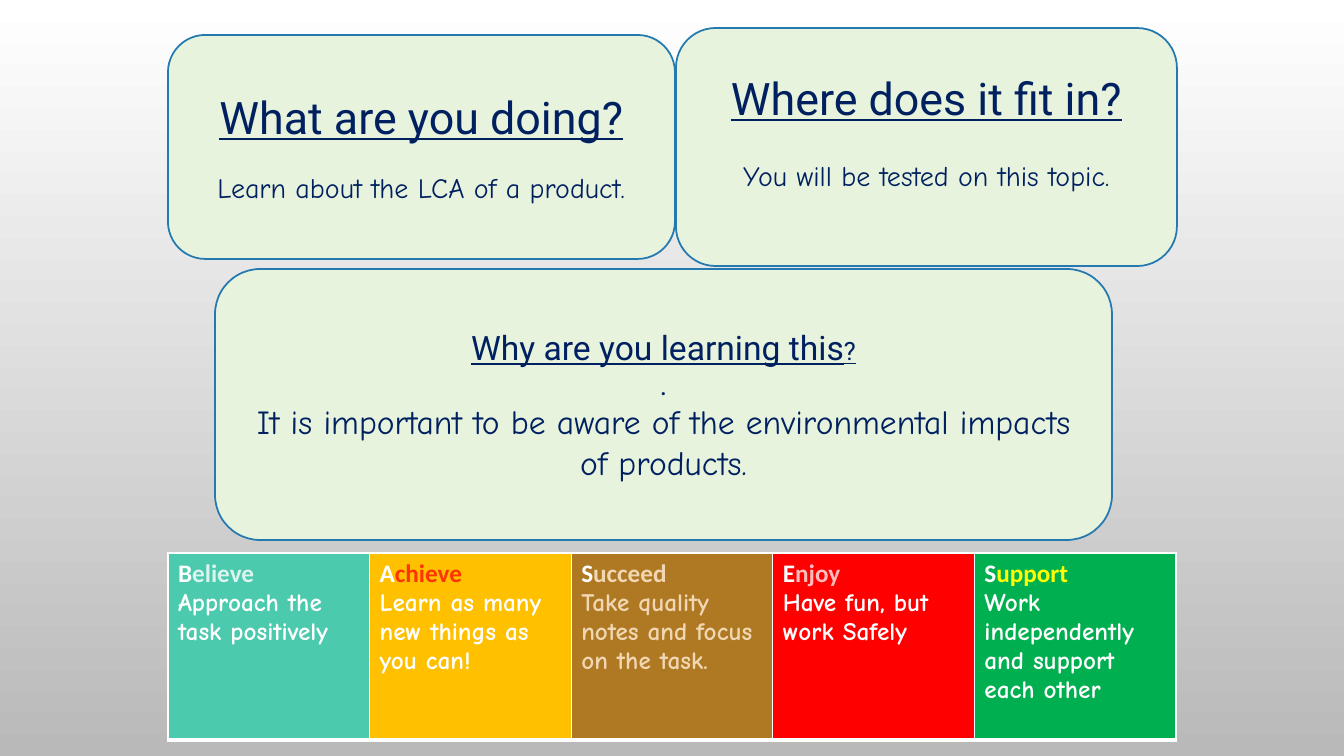
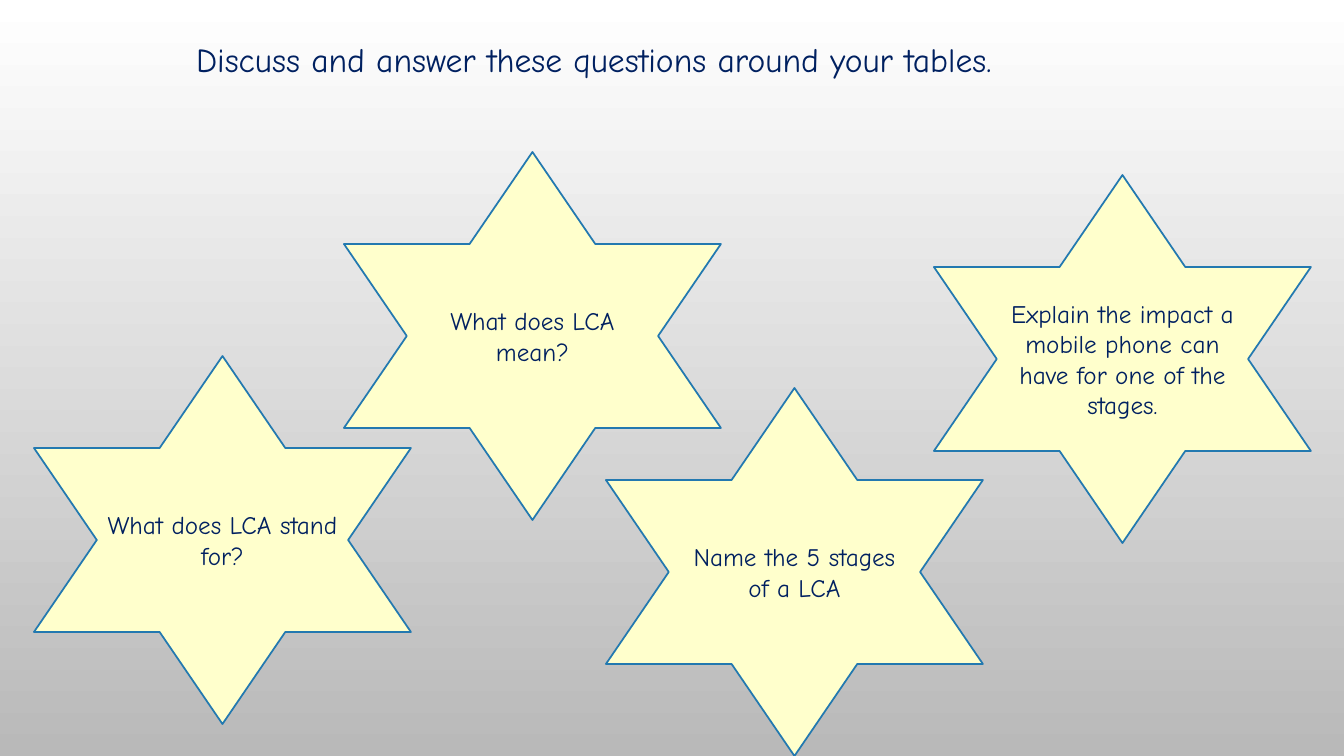
from dataclasses import dataclass

from lxml.etree import SubElement
from pptx import Presentation
from pptx.dml.color import RGBColor
from pptx.enum.shapes import MSO_SHAPE as Preset
from pptx.enum.text import MSO_ANCHOR as Anchor, MSO_AUTO_SIZE as AutoSize, PP_ALIGN as Align
from pptx.oxml.ns import qn
from pptx.util import Emu, Pt

PX = 914400 / 100.8
TITLE_ONLY, BLANK = 5, 6


@dataclass(frozen=True)
class Theme:
    ink: str = "002060"
    outline: str = "2379B0"
    card: str = "E7F3DD"
    star: str = "FFFFCC"
    white: str = "FFFFFF"
    sky: tuple = ("FFFFFF", "B9B9B9")
    heading_font: str = "Roboto"
    hand_font: str = "Comic Neue"
    value_font: str = "Calibri"
    display: int = 32
    large: int = 24
    medium: int = 20
    small: int = 18


THEME = Theme()
HEADING = {"name": THEME.heading_font, "underline": True}
HAND = {"name": THEME.hand_font}

CARDS = [
    ((168, 35, 507, 224), 5, [
        (0, [("What are you doing?", THEME.display, HEADING)]),
        (19, [("Learn about the LCA of a product.", THEME.medium, HAND)]),
    ]),
    ((676, 28, 501, 238), 36, [
        (0, [("Where does it fit in?", THEME.display, HEADING)]),
        (24, [("You will be tested on this topic.", THEME.medium, HAND)]),
    ]),
    ((215, 269, 897, 271), 5, [
        (0, [("Why are you learning this", THEME.large, HEADING),
             ("?", THEME.small, HEADING)]),
        (0, [(".", THEME.medium, {"name": THEME.heading_font})]),
        (0, [("It is important to be aware of the environmental impacts of products.",
              THEME.large, HAND)]),
    ]),
]

VALUES = [
    ("Believe", "Approach the task positively", "4BCAAD", "DBF4EF", THEME.white),
    ("Achieve", "Learn as many new things as you can!", "FFC000", "FF3300", THEME.white),
    ("Succeed", "Take quality notes and focus on the task.", "AF7823", "F0D7B2", "F0D7B2"),
    ("Enjoy", "Have fun, but work Safely", "FF0000", "FFBDBD", THEME.white),
    ("Support", "Work independently and support each other", "00B050", "FFFF00", THEME.white),
]

STAR_SIZE = (377, 368)
QUESTIONS = [
    ((34, 356), ["What does LCA stand for?"]),
    ((606, 388), ["Name the 5 stages", "of a LCA"]),
    ((344, 152), ["What does LCA mean?"]),
    ((934, 175), ["Explain the impact a mobile phone can have for one of the stages."]),
]


def px(length):
    return Emu(round(length * PX))


def emu_box(box):
    return [px(length) for length in box]


def paint(fill, colour):
    fill.solid()
    fill.fore_color.rgb = RGBColor.from_string(colour)


def add_run(paragraph, text, size, style, colour=THEME.ink):
    run = paragraph.add_run()
    run.text = text
    for attribute, value in {"size": Pt(size), **style}.items():
        setattr(run.font, attribute, value)
    run.font.color.rgb = RGBColor.from_string(colour)


def write_paragraphs(frame, paragraphs, align=Align.CENTER):
    for index, (gap, runs) in enumerate(paragraphs):
        paragraph = frame.add_paragraph() if index else frame.paragraphs[0]
        paragraph.alignment = align
        paragraph.space_before = Pt(gap)
        for run in runs:
            add_run(paragraph, *run)


def add_panel(slide, preset, box, colour, paragraphs, bottom_inset=5):
    panel = slide.shapes.add_shape(preset, *emu_box(box))
    panel.shadow.inherit = False
    paint(panel.fill, colour)
    paint(panel.line.fill, THEME.outline)
    panel.line.width = Pt(1.25)
    frame = panel.text_frame
    frame_format = {"word_wrap": True, "vertical_anchor": Anchor.MIDDLE,
                    "margin_bottom": px(bottom_inset)}
    for attribute, value in frame_format.items():
        setattr(frame, attribute, value)
    write_paragraphs(frame, paragraphs)


def add_borders(cell):
    properties = cell._tc.get_or_add_tcPr()
    for side, width in {"lnL": 1, "lnR": 1, "lnT": 1, "lnB": 3}.items():
        line = SubElement(properties, qn(f"a:{side}"), w=str(Pt(width)))
        solid = SubElement(line, qn("a:solidFill"))
        SubElement(solid, qn("a:srgbClr"), val=THEME.white)


def add_values_table(slide, box):
    table = slide.shapes.add_table(1, len(VALUES), *emu_box(box)).table
    table.first_row = table.horz_banding = False
    value_style = {"name": THEME.value_font, "bold": True}
    advice_style = {**HAND, "bold": True}
    for cell, (value, advice, fill, accent, advice_colour) in zip(table.rows[0].cells, VALUES):
        add_borders(cell)
        paint(cell.fill, fill)
        write_paragraphs(cell.text_frame, [
            (0, [(value[0], THEME.small, value_style, THEME.white),
                 (value[1:], THEME.small, value_style, accent)]),
            (0, [(advice, THEME.small, advice_style, advice_colour)]),
        ], Align.LEFT)


def add_title(slide, box, text):
    title = slide.shapes.title
    for attribute, value in zip(("left", "top", "width", "height"), emu_box(box)):
        setattr(title, attribute, value)
    frame = title.text_frame
    frame_format = {"word_wrap": True, "vertical_anchor": Anchor.TOP,
                    "auto_size": AutoSize.NONE}
    for attribute, value in frame_format.items():
        setattr(frame, attribute, value)
    write_paragraphs(frame, [(0, [(text, THEME.large, HAND)])], Align.LEFT)


def set_background(master):
    fill = master.background.fill
    fill.gradient()
    fill.gradient_angle = 270
    for stop, position, colour in zip(fill.gradient_stops, (0, 1), THEME.sky):
        stop.position = position
        stop.color.rgb = RGBColor.from_string(colour)


def build_purpose_slide(deck):
    slide = deck.slides.add_slide(deck.slide_layouts[BLANK])
    for box, bottom_inset, paragraphs in CARDS:
        add_panel(slide, Preset.ROUNDED_RECTANGLE, box, THEME.card, paragraphs, bottom_inset)
    add_values_table(slide, (168, 553, 1008, 187))


def build_question_slide(deck):
    slide = deck.slides.add_slide(deck.slide_layouts[TITLE_ONLY])
    add_title(slide, (186, 34, 977, 50), "Discuss and answer these questions around your tables.")
    for corner, lines in QUESTIONS:
        paragraphs = [(0, [(line, THEME.small, HAND)]) for line in lines]
        add_panel(slide, Preset.STAR_6_POINT, corner + STAR_SIZE, THEME.star, paragraphs)


def main():
    deck = Presentation()
    deck.slide_width, deck.slide_height = px(1344), px(756)
    set_background(deck.slide_master)
    build_purpose_slide(deck)
    build_question_slide(deck)
    deck.save("out.pptx")


if __name__ == "__main__":
    main()
